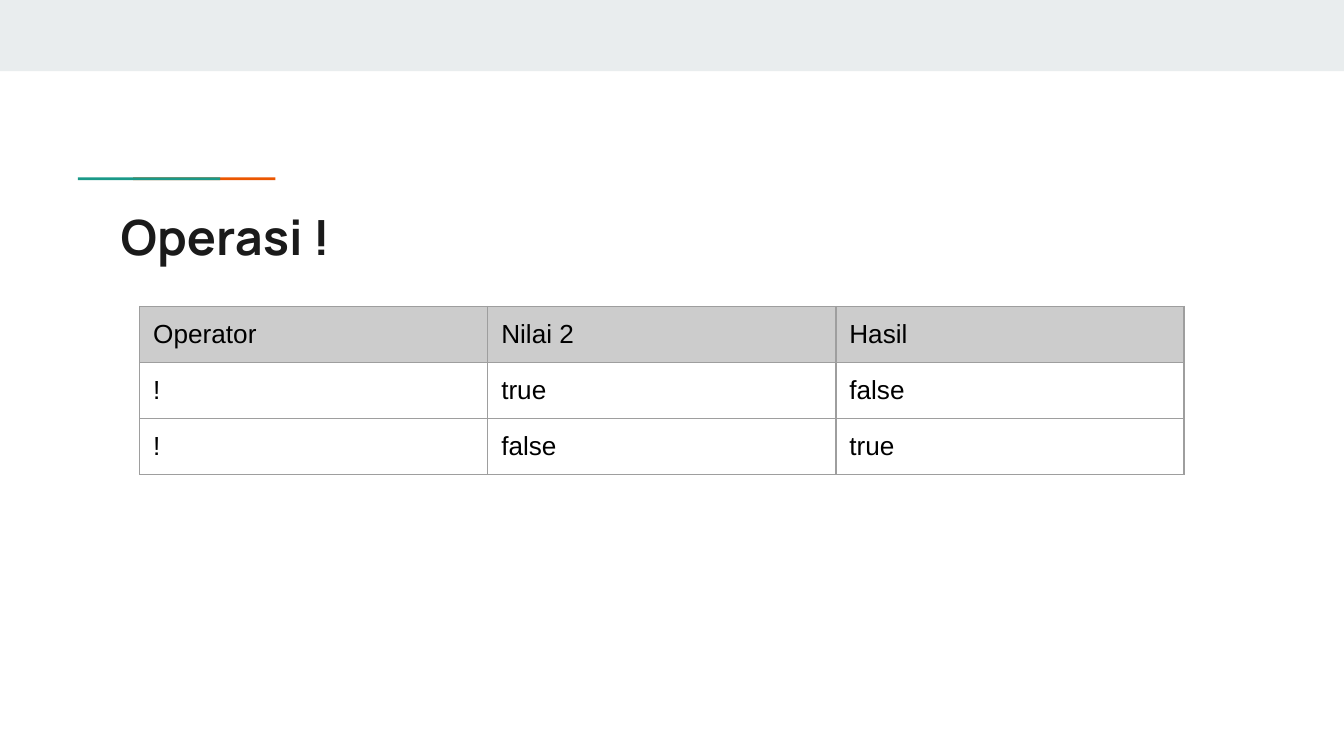
from lxml import etree
from pptx import Presentation
from pptx.dml.color import RGBColor
from pptx.enum.shapes import MSO_SHAPE
from pptx.enum.text import MSO_ANCHOR
from pptx.oxml.ns import qn
from pptx.util import Inches, Pt

RECT = MSO_SHAPE.RECTANGLE
TOP = MSO_ANCHOR.TOP
WIDTH = 10
HEIGHT = WIDTH * 9 / 16
ROWS = [
    ["Operator", "Nilai 2", "Hasil"],
    ["!", "true", "false"],
    ["!", "false", "true"],
]


def color(value):
    return RGBColor.from_string(value)


def inches(box):
    return [Inches(v) for v in box]


def add_bar(s, box, fill):
    sp = s.shapes.add_shape(RECT, *inches(box))
    sp.shadow.inherit = False
    sp.fill.solid()
    sp.fill.fore_color.rgb = color(fill)
    sp.line.fill.background()


def set_font(p, name, size, value, bold=False):
    p.font.name, p.font.size, p.font.bold = name, Pt(size), bold
    p.font.color.rgb = color(value)


def set_padding(holder, bottom=0.1):
    holder.margin_left = holder.margin_right = holder.margin_top = Inches(0.1)
    holder.margin_bottom = Inches(bottom)
    holder.vertical_anchor = TOP


def add_accent(s, box):
    """Two overlapping bars, teal over orange, that together fill the box."""
    left, top, width, height = box
    bar = width * 0.72
    add_bar(s, (left + width - bar, top, bar, height), "EB5600")
    add_bar(s, (left, top, bar, height), "1A9988")


def add_title(s, box, text):
    tf = s.shapes.add_textbox(*inches(box)).text_frame
    tf.word_wrap = True
    set_padding(tf)
    p = tf.paragraphs[0]
    p.text = text
    set_font(p, "Manrope", 26, "1A1A1A", bold=True)


def set_borders(cell, value, width):
    tcPr = cell._tc.get_or_add_tcPr()
    for i, side in enumerate(("a:lnL", "a:lnR", "a:lnT", "a:lnB")):
        ln = etree.Element(qn(side), w=str(Pt(width)))
        fill = etree.SubElement(ln, qn("a:solidFill"))
        etree.SubElement(fill, qn("a:srgbClr"), val=value)
        tcPr.insert(i, ln)  # borders come before the fill


def add_truth_table(s, box, rows):
    table = s.shapes.add_table(len(rows), len(rows[0]), *inches(box)).table
    table.horz_banding = False
    for i, row in enumerate(rows):
        for j, text in enumerate(row):
            cell = table.cell(i, j)
            set_padding(cell, bottom=0.08)  # keeps the rows from growing
            if i == 0:
                cell.fill.solid()
                cell.fill.fore_color.rgb = color("CCCCCC")
            else:
                cell.fill.background()
            set_borders(cell, "9E9E9E", 0.75)
            p = cell.text_frame.paragraphs[0]
            p.text = text
            set_font(p, "Arial", 14, "000000")


def main():
    prs = Presentation()
    prs.slide_width, prs.slide_height = Inches(WIDTH), Inches(HEIGHT)
    s = prs.slides.add_slide(prs.slide_layouts[6])

    # Header band and accent line
    add_bar(s, (0, 0, WIDTH, 0.53), "E9EDEE")
    add_accent(s, (0.58, 1.32, 1.47, 0.02))

    # Title and truth table
    add_title(s, (0.8, 1.44, 8.41, 0.59), "Operasi !")
    add_truth_table(s, (1.04, 2.28, 3 * 2.59, 1.25), ROWS)

    prs.save("out.pptx")


if __name__ == "__main__":
    main()
